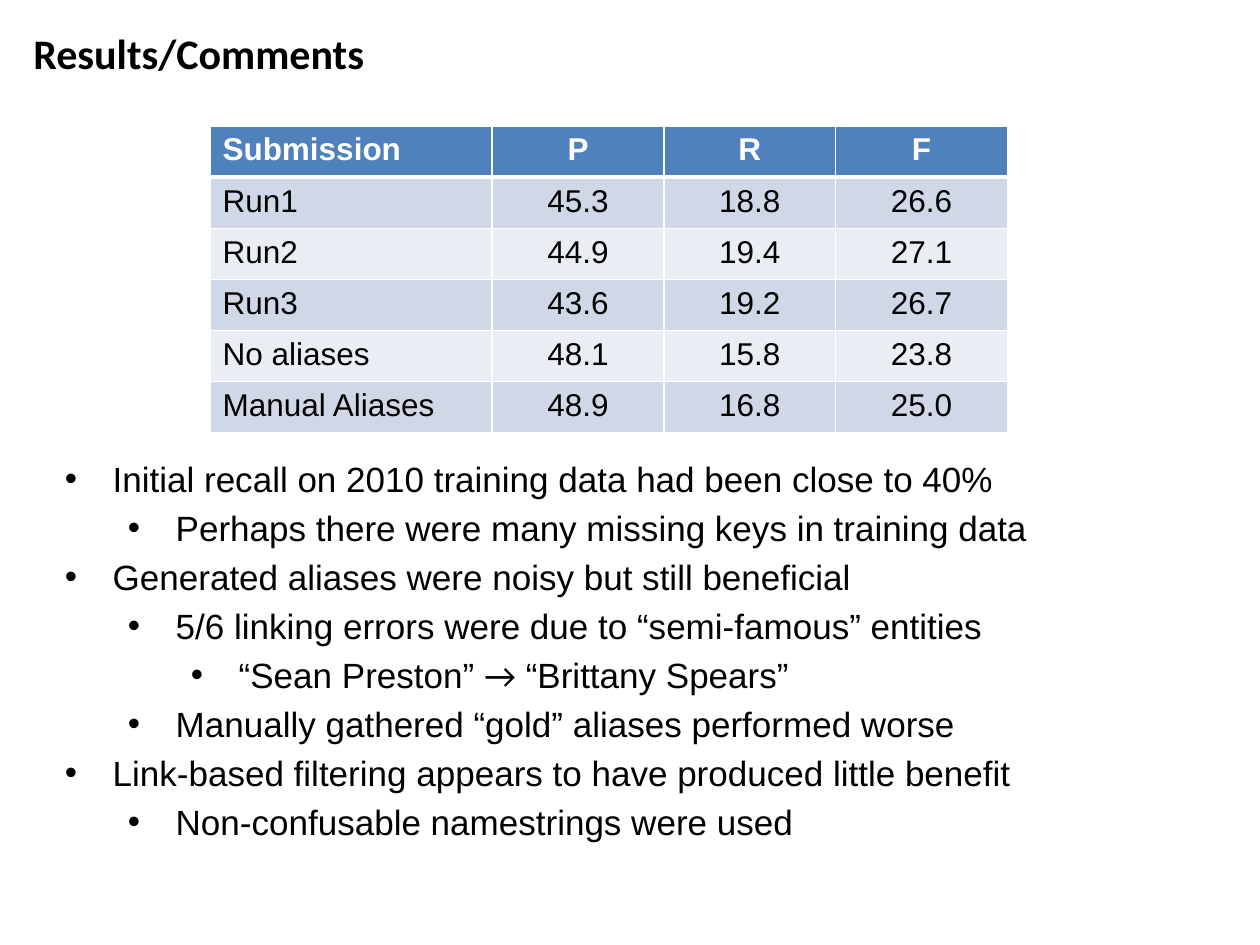
import pptx
import pptx.util
import pptx.dml.color
import pptx.enum.text
import pptx.oxml
import pptx.oxml.ns
import lxml.etree

COLORS = {"ink": "000000", "paper": "FFFFFF", "header": "4F81BD",
          "odd": "D0D8E8", "even": "E9EDF4"}
ALIGN = pptx.enum.text.PP_ALIGN
qn = pptx.oxml.ns.qn

deck = pptx.Presentation()
deck.slide_width = pptx.util.Inches(10)
deck.slide_height = pptx.util.Inches(7.5)
wide, high = deck.slide_width, deck.slide_height
page = deck.slides.add_slide(deck.slide_layouts[6])


def style(font, name, size, color, bold=False):
    font.name = name
    font.size = pptx.util.Pt(size)
    font.bold = bold
    font.color.rgb = pptx.dml.color.RGBColor.from_string(COLORS[color])


def add_box(left, top, width, height):
    box = page.shapes.add_textbox(int(wide * left), int(high * top),
                                  int(wide * width), int(high * height))
    box.text_frame.word_wrap = True
    return box.text_frame


title = add_box(1 / 60, 1 / 45, 0.8, 1 / 15)
title.vertical_anchor = pptx.enum.text.MSO_ANCHOR.MIDDLE
title.text = "Results/Comments"
style(title.paragraphs[0].runs[0].font, "Calibri", 24, "ink", True)

scores = [
    ("Submission", "P", "R", "F"),
    ("Run1", "45.3", "18.8", "26.6"),
    ("Run2", "44.9", "19.4", "27.1"),
    ("Run3", "43.6", "19.2", "26.7"),
    ("No aliases", "48.1", "15.8", "23.8"),
    ("Manual Aliases", "48.9", "16.8", "25.0"),
]
table_width, name_width = pptx.util.Inches(6.33), pptx.util.Inches(2.24)
score_width = (table_width - name_width) // 3
row_height = int(high * 13 / 240)
table = page.shapes.add_table(
    len(scores), 4, int(wide / 6), int(high * 2 / 15),
    table_width, len(scores) * row_height).table
for index, column in enumerate(table.columns):
    column.width = score_width if index else name_width

for row, values in enumerate(scores):
    table.rows[row].height = row_height
    fill = "header" if row == 0 else ("odd" if row % 2 else "even")
    for column, value in enumerate(values):
        cell = table.cell(row, column)
        cell.text = value
        para = cell.text_frame.paragraphs[0]
        para.alignment = ALIGN.CENTER if column else ALIGN.LEFT
        style(para.runs[0].font, "Arial", 18, "ink" if row else "paper", row == 0)
        properties = cell._tc.get_or_add_tcPr()
        for side in "LRTB":
            thick = (row, side) in ((0, "B"), (1, "T"))
            line = lxml.etree.SubElement(properties, qn("a:ln" + side),
                                         w=str(pptx.util.Pt(3 if thick else 1)))
            solid = lxml.etree.SubElement(line, qn("a:solidFill"))
            lxml.etree.SubElement(solid, qn("a:srgbClr"), val=COLORS["paper"])
        cell.fill.solid()
        cell.fill.fore_color.rgb = pptx.dml.color.RGBColor.from_string(COLORS[fill])

comments = [
    (0, ["Initial recall on 2010 training data had been close to 40%"]),
    (1, ["Perhaps there were many missing keys in training data"]),
    (0, ["Generated aliases were noisy but still beneficial"]),
    (1, ["5/6 linking errors were due to “semi-famous” entities"]),
    (2, ["“Sean Preston” ", "→", " “Brittany Spears”"]),
    (1, ["Manually gathered “gold” aliases performed worse"]),
    (0, ["Link-based filtering appears to have produced little benefit"]),
    (1, ["Non-confusable namestrings were used"]),
]
body = add_box(1 / 24, 43 / 90, 0.91, 0.44)
hanging = pptx.util.Inches(0.38)
for index, (level, pieces) in enumerate(comments):
    para = body.add_paragraph() if index else body.paragraphs[0]
    para.level = level
    if index:
        para.space_before = pptx.util.Pt(4)
    properties = para._p.get_or_add_pPr()
    properties.set("marL", str(hanging + level * pptx.util.Inches(0.5)))
    properties.set("indent", str(-hanging))
    lxml.etree.SubElement(properties, qn("a:buFont"), typeface="Arial")
    lxml.etree.SubElement(properties, qn("a:buChar"), char="•")
    for piece in pieces:
        span = para.add_run()
        span.text = piece
        style(span.font, "Calibri" if piece == "→" else "Arial", 20, "ink")

deck.save("out.pptx")
